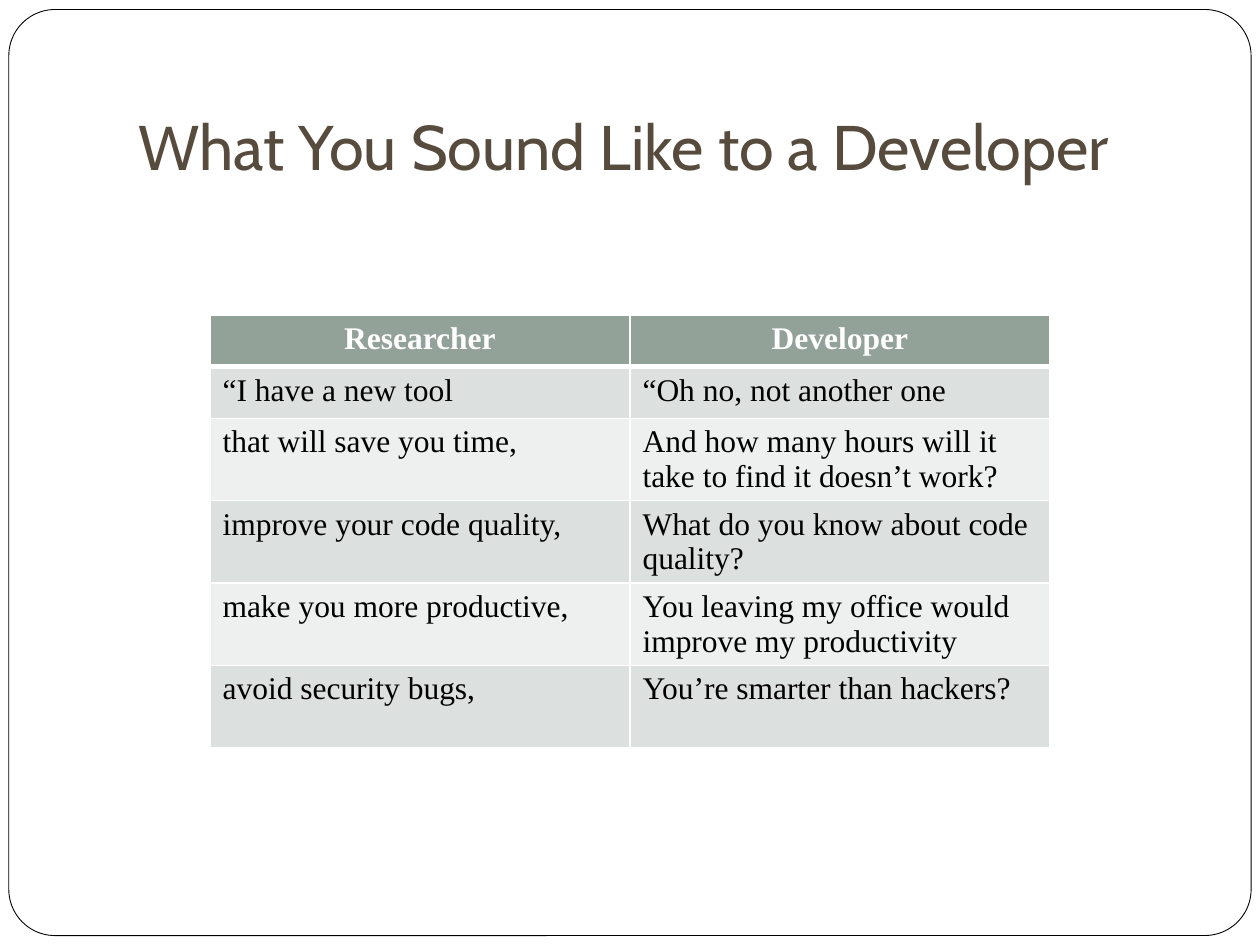
from dataclasses import dataclass

from pptx import Presentation
from pptx.dml.color import RGBColor
from pptx.enum.shapes import MSO_SHAPE as Shape
from pptx.enum.text import MSO_ANCHOR as Anchor, PP_ALIGN as Align
from pptx.oxml.ns import qn
from pptx.util import Inches, Pt
from lxml.etree import SubElement

TITLE_ONLY = 5


@dataclass(frozen=True)
class Theme:
    title_font: str = "Cabin"
    table_font: str = "Times New Roman"
    title_size: float = 36
    table_size: float = 18
    title_color: str = "564B3C"
    text: str = "000000"
    paper: str = "FFFFFF"
    header: str = "93A299"
    bands: tuple = ("DCE0DE", "EEF0EF")
    frame_line: float = 0.5
    rule: float = 1
    header_rule: float = 3


class SlideBuilder:
    def __init__(self, deck, theme):
        self.deck = deck
        self.theme = theme
        self.page = deck.slides.add_slide(deck.slide_layouts[TITLE_ONLY])

    def area(self, left, top, width, height):
        """Turn shares of the slide's size into lengths."""
        wide, high = self.deck.slide_width, self.deck.slide_height
        return [round(share * size) for share, size in
                zip((left, top, width, height), (wide, high, wide, high))]

    def set_font(self, font, name, size, color, bold=False):
        font.name, font.size, font.bold = name, Pt(size), bold
        font.color.rgb = RGBColor.from_string(color)

    def frame(self, *shares):
        box = self.page.shapes.add_shape(Shape.ROUNDED_RECTANGLE, *self.area(*shares))
        box.adjustments[0] = 0.05
        box.shadow.inherit = False
        box.fill.solid()
        box.fill.fore_color.rgb = RGBColor.from_string(self.theme.paper)
        box.line.color.rgb = RGBColor.from_string(self.theme.text)
        box.line.width = Pt(self.theme.frame_line)
        # Send the frame behind the title.
        self.page.shapes.title.element.addprevious(box.element)

    def title(self, text, *shares):
        box = self.page.shapes.title
        box.left, box.top, box.width, box.height = self.area(*shares)
        words = box.text_frame
        words.text = text
        words.word_wrap = True
        words.vertical_anchor = Anchor.BOTTOM
        words.margin_left = words.margin_right = words.margin_bottom = Inches(0.1)
        words.margin_top = Inches(0.05)
        para = words.paragraphs[0]
        para.alignment = Align.LEFT
        self.set_font(para.font, self.theme.title_font, self.theme.title_size,
                      self.theme.title_color)

    def table(self, rows, row_heights, left, top, width):
        """Add a table; row heights are shares of the slide's height."""
        area = self.area(left, top, width, sum(row_heights))
        table = self.page.shapes.add_table(len(rows), len(rows[0]), *area).table
        for index, (texts, height) in enumerate(zip(rows, row_heights)):
            table.rows[index].height = round(height * self.deck.slide_height)
            for column, text in enumerate(texts):
                self.cell(table.cell(index, column), text, index)

    def cell(self, cell, text, row):
        theme, is_header = self.theme, row == 0
        cell.text = text
        para = cell.text_frame.paragraphs[0]
        para.alignment = Align.CENTER if is_header else Align.LEFT
        self.set_font(para.font, theme.table_font, theme.table_size,
                      theme.paper if is_header else theme.text, is_header)
        self.borders(cell, above=theme.header_rule if row == 1 else theme.rule,
                     below=theme.header_rule if is_header else theme.rule)
        fill = theme.header if is_header else theme.bands[(row - 1) % 2]
        cell.fill.solid()
        cell.fill.fore_color.rgb = RGBColor.from_string(fill)

    def borders(self, cell, above, below):
        properties = cell._tc.get_or_add_tcPr()
        sides = {"L": self.theme.rule, "R": self.theme.rule, "T": above, "B": below}
        for side, width in sides.items():
            line = SubElement(properties, qn(f"a:ln{side}"), w=str(Pt(width)))
            fill = SubElement(line, qn("a:solidFill"))
            SubElement(fill, qn("a:srgbClr"), val=self.theme.paper)


def main():
    deck = Presentation()
    deck.slide_width, deck.slide_height = Inches(10), Inches(7.5)
    slide = SlideBuilder(deck, Theme())

    slide.frame(0.007, 0.01, 0.986, 0.98)
    slide.title("What You Sound Like to a Developer", 0.1, 0.04, 0.85, 1 / 6)

    dialogue = [
        ("Researcher", "Developer"),
        ("“I have a new tool", "“Oh no, not another one"),
        ("that will save you time,",
         "And how many hours will it take to find it doesn’t work?"),
        ("improve your code quality,", "What do you know about code quality?"),
        ("make you more productive,",
         "You leaving my office would improve my productivity"),
        ("avoid security bugs,", "You’re smarter than hackers?"),
    ]
    one_line, two_lines = 0.41 / 7.5, 0.65 / 7.5
    slide.table(dialogue, [one_line] * 2 + [two_lines] * 4, 1 / 6, 1 / 3, 2 / 3)

    deck.save("out.pptx")


if __name__ == "__main__":
    main()
